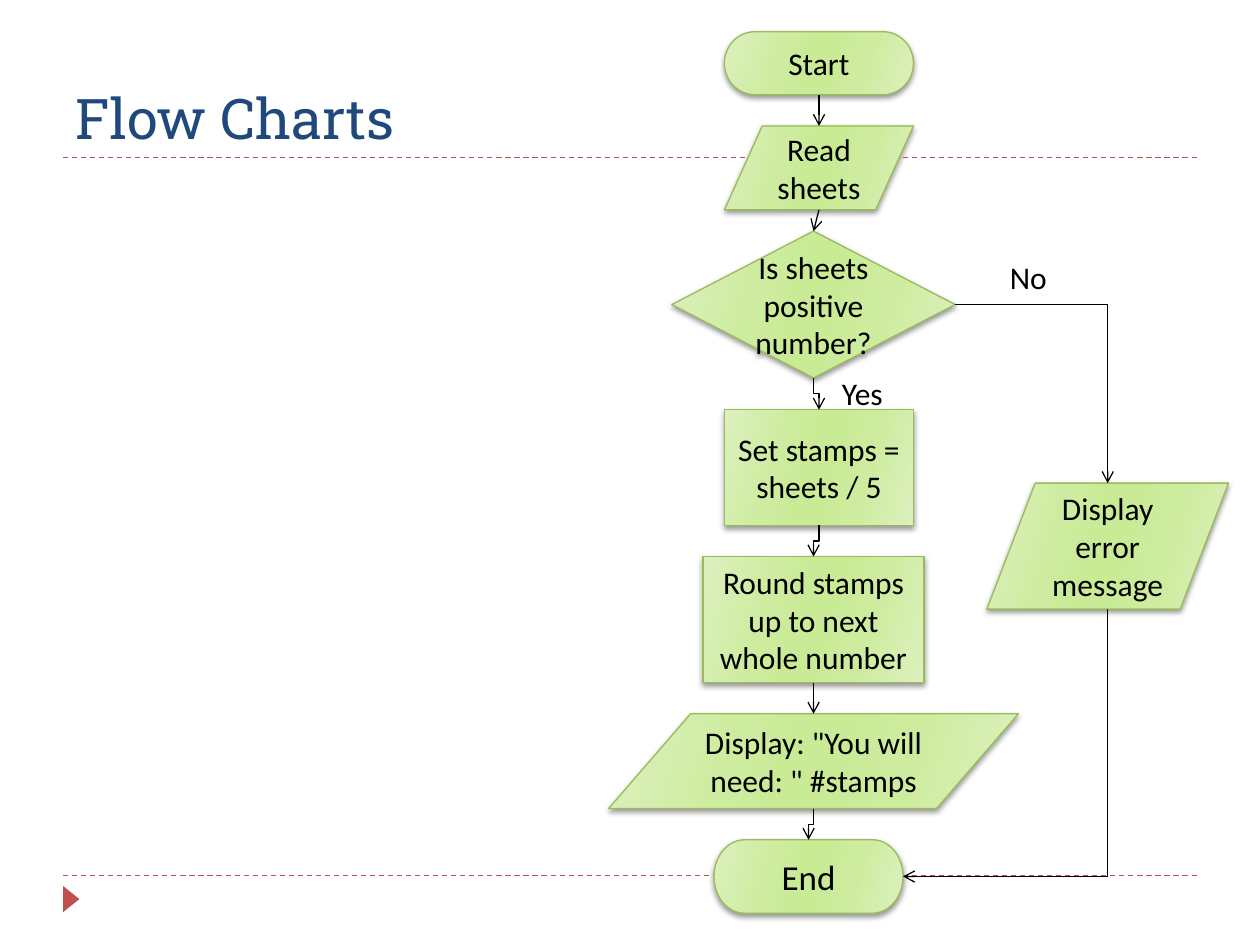
from lxml.etree import SubElement
from pptx import Presentation
from pptx.dml.color import RGBColor
from pptx.enum.dml import MSO_LINE
from pptx.enum.shapes import MSO_CONNECTOR, MSO_SHAPE
from pptx.enum.text import MSO_ANCHOR, MSO_AUTO_SIZE, PP_ALIGN
from pptx.oxml.ns import qn
from pptx.util import Cm, Pt

BLACK = RGBColor(0, 0, 0)
NAVY = RGBColor(0x1F, 0x49, 0x7D)
RED = RGBColor(0xC0, 0x50, 0x4D)
GREEN = RGBColor(0x9B, 0xBB, 0x59)
PALE = RGBColor(0xDC, 0xF0, 0xBE)
LIGHT = RGBColor(0xCE, 0xEC, 0xA0)
LIME = RGBColor(0xC9, 0xEB, 0x96)
STOPS = [(0, PALE), (30, LIGHT), (45, LIME), (55, LIME), (73, LIGHT), (100, PALE)]

TITLE = "Flow Charts"
ENDS = MSO_SHAPE.FLOWCHART_TERMINATOR
DATA = MSO_SHAPE.FLOWCHART_DATA
STEP = MSO_SHAPE.FLOWCHART_PROCESS
TEST = MSO_SHAPE.FLOWCHART_DECISION

# name: kind, text, size, centre x, top, width, height
NODES = {
    "start": (ENDS, "Start", 18, 16.51, 0.64, 3.81, 1.27),
    "read": (DATA, "Read sheets", 18, 16.51, 2.54, 3.81, 1.69),
    "test": (TEST, "Is sheets positive number?", 18, 16.4, 4.66, 5.71, 2.96),
    "set": (STEP, "Set stamps = sheets / 5", 18, 16.51, 8.26, 3.81, 2.33),
    "round": (STEP, "Round stamps up to next whole number", 18, 16.4, 11.22, 4.45, 2.54),
    "show": (DATA, 'Display: "You will need: " #stamps', 18, 16.4, 14.39, 8.26, 1.91),
    "end": (ENDS, "End", 20, 16.3, 16.93, 3.81, 1.48),
    "error": (DATA, "Display error message", 18, 22.33, 9.74, 4.87, 2.54),
}
LINKS = [
    ("start", "bottom", "read", "top", "down"),
    ("read", "bottom", "test", "top", "line"),
    ("test", "bottom", "set", "top", "down"),
    ("set", "bottom", "round", "top", "down"),
    ("round", "bottom", "show", "top", "down"),
    ("show", "bottom", "end", "top", "down"),
    ("test", "right", "error", "top", "across"),
    ("error", "bottom", "end", "right", "turn"),
]
LABELS = [("No", 20.11, 5.08, 1.27), ("Yes", 16.72, 7.41, 1.35)]
RULES = [17.65, 3.18]


def style(frame, font, size, color, align):
    for para in frame.paragraphs:
        para.alignment = align
        for run in para.runs:
            run.font.name = font
            run.font.size = Pt(size)
            run.font.color.rgb = color


def shade(shape):
    shape.fill.gradient()
    shape.fill.gradient_angle = 344
    props = shape._element.spPr
    stops = props.find(".//" + qn("a:gsLst"))
    stops.clear()
    for place, color in STOPS:
        stop = SubElement(stops, qn("a:gs"), pos=str(place * 1000))
        SubElement(stop, qn("a:srgbClr"), val=str(color))
    shape.shadow.inherit = False
    cast = SubElement(props.find(qn("a:effectLst")), qn("a:outerShdw"),
                      blurRad="40000", dist="20000", dir="5400000", rotWithShape="0")
    tone = SubElement(cast, qn("a:srgbClr"), val=str(BLACK))
    SubElement(tone, qn("a:alpha"), val="40000")


def add_node(shapes, kind, text, size, mid, top, width, height):
    node = shapes.add_shape(kind, Cm(mid - width / 2), Cm(top), Cm(width), Cm(height))
    shade(node)
    node.line.color.rgb = GREEN
    node.line.width = Pt(0.75)
    node.text_frame.word_wrap = True
    node.text_frame.text = text
    style(node.text_frame, "Calibri", size, BLACK, PP_ALIGN.CENTER)


def add_line(shapes, kind, start, stop, color):
    line = shapes.add_connector(kind, *[Cm(v) for v in start + stop])
    line.line.color.rgb = color
    line.line.width = Pt(0.75)
    SubElement(line._element.spPr, qn("a:effectLst"))
    return line


def port(name, side):
    mid, top, width, height = NODES[name][3:]
    return {
        "top": (mid, top),
        "bottom": (mid, top + height),
        "right": (mid + width / 2, top + height / 2),
    }[side]


def add_link(shapes, start, stop, route):
    kind = MSO_CONNECTOR.STRAIGHT if route == "line" else MSO_CONNECTOR.ELBOW
    upright = route in ("down", "turn")
    if upright:
        (x, y), (u, v) = start, stop
        mid, half = (x + u) / 2, (y + v) / 2
        long, wide = (v - y) / 2, (x - u) / 2
        start, stop = (mid - long, half - wide), (mid + long, half + wide)
    link = add_line(shapes, kind, start, stop, BLACK)
    props = link._element.spPr
    if upright:
        props.find(qn("a:xfrm")).set("rot", "5400000")
    if route in ("across", "turn"):
        props.find(qn("a:prstGeom")).set("prst", "bentConnector2")
    SubElement(props.find(qn("a:ln")), qn("a:tailEnd"), type="arrow")


def main():
    deck = Presentation()
    deck.slide_width, deck.slide_height = Cm(25.4), Cm(19.05)
    slide = deck.slides.add_slide(deck.slide_layouts[5])
    shapes = slide.shapes

    for y in RULES:
        rule = add_line(shapes, MSO_CONNECTOR.STRAIGHT, (1.27, y), (24.13, y), RED)
        rule.line.dash_style = MSO_LINE.DASH
    mark = shapes.add_shape(MSO_SHAPE.ISOSCELES_TRIANGLE, Cm(1.17), Cm(17.96), Cm(0.53), Cm(0.33))
    mark.rotation = 90
    mark.shadow.inherit = False
    mark.fill.solid()
    mark.fill.fore_color.rgb = RED
    mark.line.fill.background()

    title = shapes.title
    title.left, title.top, title.width, title.height = Cm(1.27), Cm(0.43), Cm(22.86), Cm(2.74)
    frame = title.text_frame
    frame.text = TITLE
    frame.auto_size = MSO_AUTO_SIZE.NONE
    frame.vertical_anchor = MSO_ANCHOR.BOTTOM
    style(frame, "Roboto Slab", 32, NAVY, PP_ALIGN.LEFT)

    for node in NODES.values():
        add_node(shapes, *node)
    for first, out, last, side, route in LINKS:
        add_link(shapes, port(first, out), port(last, side), route)
    for text, left, top, width in LABELS:
        label = shapes.add_textbox(Cm(left), Cm(top), Cm(width), Cm(1.03))
        label.text_frame.text = text
        label.text_frame.word_wrap = False
        label.text_frame.auto_size = MSO_AUTO_SIZE.SHAPE_TO_FIT_TEXT
        style(label.text_frame, "Calibri", 18, BLACK, PP_ALIGN.LEFT)

    deck.save("out.pptx")


if __name__ == "__main__":
    main()
